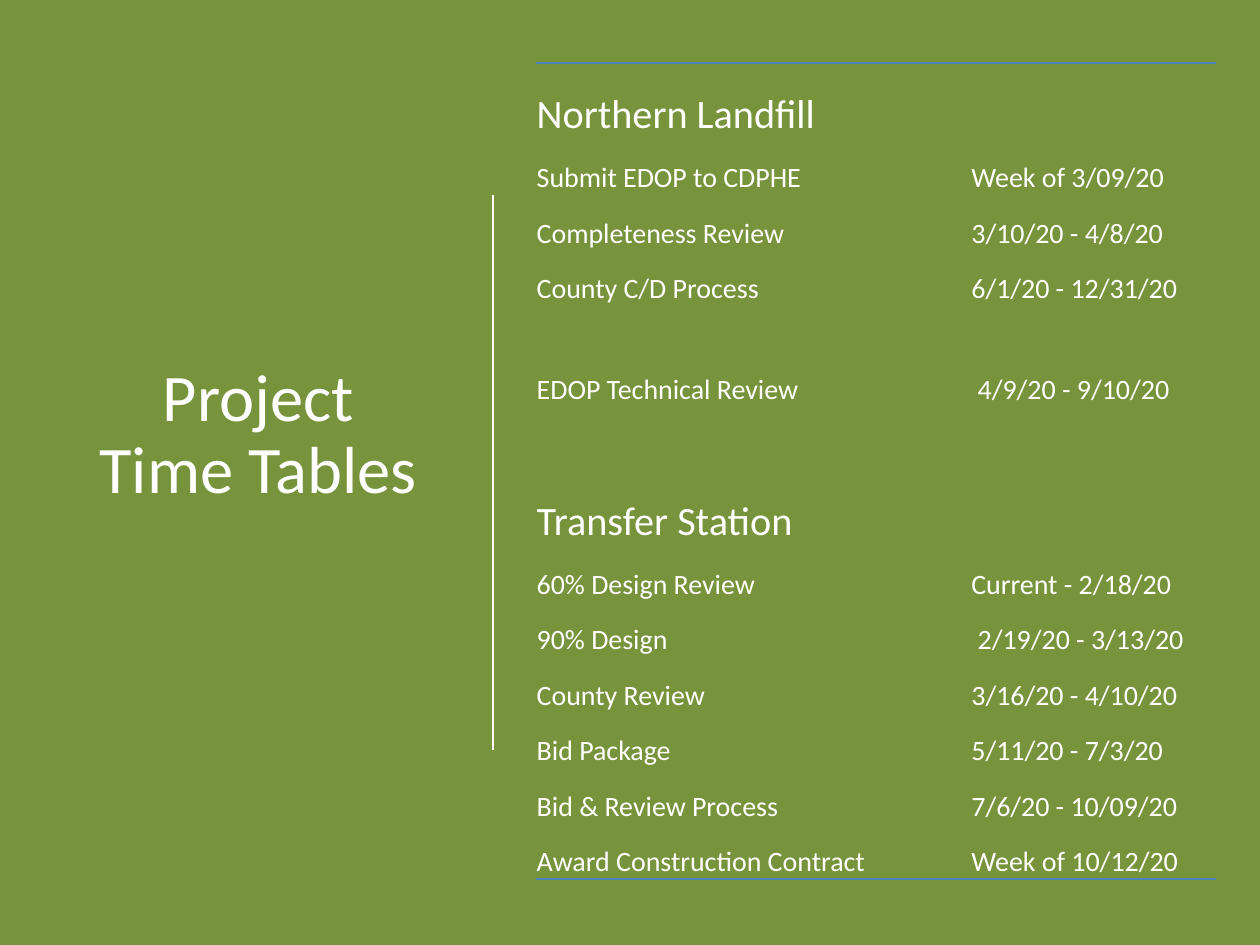
import pptx
import pptx.dml.color
import pptx.enum.shapes
import pptx.enum.text
import pptx.oxml
import pptx.oxml.ns
import pptx.util
from dataclasses import dataclass
from pptx.util import Inches


@dataclass(frozen=True)
class Theme:
    green: str = "77933C"
    white: str = "FFFFFF"
    blue: str = "4F81BD"
    font: str = "Calibri"
    title: int = 38
    heading: int = 23
    body: int = 16


T = Theme()
ANCHOR = pptx.enum.text.MSO_ANCHOR
NO_GRID_STYLE = "{2D5ABB26-0587-4C30-8999-92F81FD0307C}"
COLS = [2.29, 0.3, 0.53, 0.33, 1.83, 0.12]
DATE_COL = 4
ROW_H, HEADING_H = 0.44, 0.61

# label, date, columns the label spans, row height
ROWS = [
    ("Northern Landfill", "", 3, HEADING_H),
    ("Submit EDOP to CDPHE", "Week of 3/09/20", 3, ROW_H),
    ("Completeness Review", "3/10/20 - 4/8/20", 4, ROW_H),
    ("County C/D Process", "6/1/20 - 12/31/20", 2, ROW_H),
    ("EDOP Technical Review", " 4/9/20 - 9/10/20", 4, 0.8),
    ("", "", 1, 0.5),
    ("Transfer Station", "", 3, HEADING_H),
    ("60% Design Review", "Current - 2/18/20", 2, ROW_H),
    ("90% Design", " 2/19/20 - 3/13/20", 2, ROW_H),
    ("County Review", "3/16/20 - 4/10/20", 3, ROW_H),
    ("Bid Package", "5/11/20 - 7/3/20", 2, ROW_H),
    ("Bid & Review Process", "7/6/20 - 10/09/20", 3, ROW_H),
    ("Award Construction Contract", "Week of 10/12/20", 4, ROW_H),
]


def rgb(color):
    return pptx.dml.color.RGBColor.from_string(color)


def write(tf, text, size=T.body, color=T.white, align=None, spacing=None):
    p = tf.paragraphs[0]
    p.alignment = align
    p.line_spacing = spacing
    r = p.add_run()
    r.text = text
    r.font.name = T.font
    r.font.size = pptx.util.Pt(size)
    r.font.color.rgb = rgb(color)


def add_background(s, x, y, w, h):
    fill = s.background.fill
    fill.solid()
    fill.fore_color.rgb = rgb(T.green)
    sp = s.shapes.add_shape(pptx.enum.shapes.MSO_SHAPE.RECTANGLE,
                            Inches(x), Inches(y), Inches(w), Inches(h))
    sp.shadow.inherit = False
    sp.fill.solid()
    sp.fill.fore_color.rgb = rgb(T.green)
    sp.line.fill.background()


def add_title(s, x, y, w, h):
    sp = s.shapes.add_textbox(Inches(x), Inches(y), Inches(w), Inches(h))
    tf = sp.text_frame
    tf.word_wrap = True
    tf.vertical_anchor = ANCHOR.BOTTOM
    tf.margin_left = tf.margin_right = Inches(0.05)
    write(tf, "Project Time Tables", size=T.title, spacing=0.9,
          align=pptx.enum.text.PP_ALIGN.CENTER)


def add_divider(s, x, y, h):
    line = s.shapes.add_connector(pptx.enum.shapes.MSO_CONNECTOR.STRAIGHT,
                                  Inches(x), Inches(y), Inches(x), Inches(y + h))
    line.line.color.rgb = rgb(T.white)
    line.line.width = pptx.util.Pt(1.25)
    line._element.spPr.append(pptx.oxml.parse_xml(
        f'<a:effectLst {pptx.oxml.ns.nsdecls("a")}/>'))


def add_border(cell, side):
    cell._tc.get_or_add_tcPr().insert(0, pptx.oxml.parse_xml(
        f'<a:ln{side} {pptx.oxml.ns.nsdecls("a")} w="12700"><a:solidFill>'
        f'<a:srgbClr val="{T.blue}"/></a:solidFill></a:ln{side}>'))


def add_timetable(s, x, y, w, h):
    frame = s.shapes.add_table(len(ROWS), len(COLS),
                               Inches(x), Inches(y), Inches(w), Inches(h))
    table = frame.table
    table.first_row = table.horz_banding = False
    style = table._tbl.tblPr.find(pptx.oxml.ns.qn("a:tableStyleId"))
    style.text = NO_GRID_STYLE
    for col, width in zip(table.columns, COLS):
        col.width = Inches(width)

    for i, (label, date, span, height) in enumerate(ROWS):
        table.rows[i].height = Inches(height)
        for cell in table.rows[i].cells:
            cell.fill.background()
            cell.vertical_anchor = ANCHOR.BOTTOM
            cell.margin_left = cell.margin_right = cell.margin_top = Inches(0.01)
            cell.margin_bottom = 0
        if span > 1:
            table.cell(i, 0).merge(table.cell(i, span - 1))
        if label:
            size = T.heading if height == HEADING_H else T.body
            write(table.cell(i, 0).text_frame, label, size=size)
        if date:
            table.cell(i, DATE_COL).merge(table.cell(i, DATE_COL + 1))
            write(table.cell(i, DATE_COL).text_frame, date)

    # Rules above the first row and below the last
    for row, side in ((0, "T"), (len(ROWS) - 1, "B")):
        for cell in table.rows[row].cells:
            add_border(cell, side)


def main():
    prs = pptx.Presentation()
    prs.slide_width, prs.slide_height = Inches(10), Inches(7.5)
    s = prs.slides.add_slide(prs.slide_layouts[6])
    add_background(s, 0, 0, 10, 7.5)
    add_title(s, 0.69, 2.58, 2.72, 1.5)
    add_divider(s, 3.91, 1.55, 4.4)
    add_timetable(s, 4.25, 0.5, 5.4, 6.5)
    prs.save("out.pptx")


if __name__ == "__main__":
    main()
